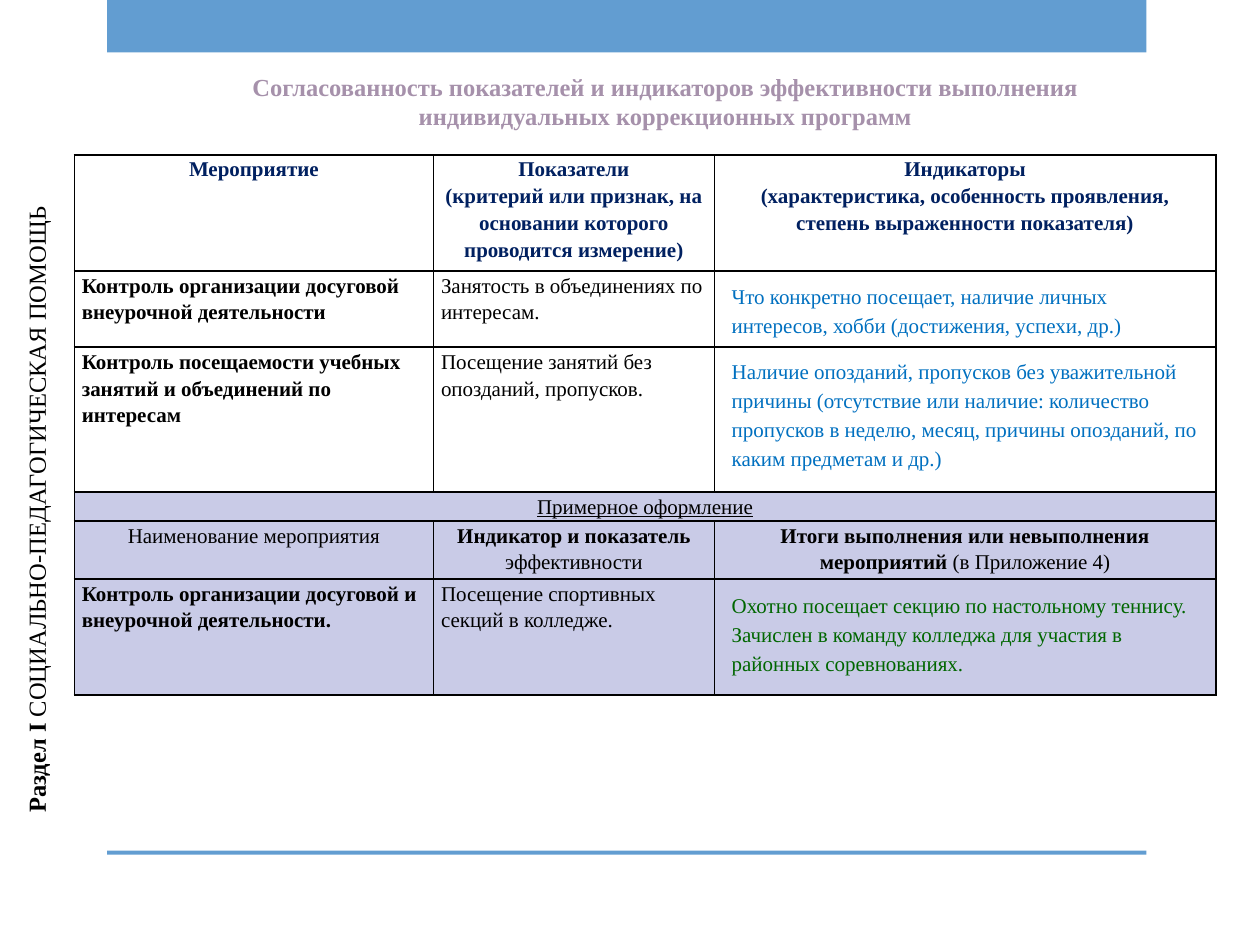
from lxml.etree import SubElement
from pptx import Presentation
from pptx.dml.color import RGBColor
from pptx.enum.shapes import MSO_SHAPE
from pptx.enum.text import MSO_AUTO_SIZE, PP_ALIGN
from pptx.oxml.ns import qn
from pptx.util import Cm, Pt

LILAC = "C9CBE7"
NAVY, BLUE, GREEN, BLACK = "002060", "0070C0", "006600", "000000"
COLUMNS = [7.24, 5.66, 10.11]
ROWS = [2.34, 1.54, 2.92, 0.58, 1.17, 2.34]

HEADER = {"align": PP_ALIGN.CENTER, "color": NAVY, "bold": True}
CENTERED = {"align": PP_ALIGN.CENTER}
CELLS = [
    (0, 0, ["Мероприятие"], HEADER),
    (0, 1, ["Показатели", "(критерий или признак, на основании которого проводится измерение)"], HEADER),
    (0, 2, ["Индикаторы", "(характеристика, особенность проявления, степень выраженности показателя)"], HEADER),
    (1, 0, ["Контроль организации досуговой внеурочной деятельности"], {"bold": True}),
    (1, 1, ["Занятость в объединениях по интересам."], {}),
    (2, 0, ["Контроль посещаемости учебных занятий и объединений по интересам"], {"bold": True}),
    (2, 1, ["Посещение занятий без опозданий, пропусков."], {}),
    (3, 0, ["Примерное оформление"], {"align": PP_ALIGN.CENTER, "underline": True}),
    (4, 0, ["Наименование мероприятия"], CENTERED),
    (4, 1, [[("Индикатор и показатель ", True), ("эффективности", False)]], CENTERED),
    (4, 2, [[("Итоги выполнения или невыполнения мероприятий ", True), ("(в Приложение 4)", False)]], CENTERED),
    (5, 0, ["Контроль организации досуговой и внеурочной деятельности."], {"bold": True}),
    (5, 1, ["Посещение спортивных секций в колледже."], {}),
]
NOTES = [
    (1, 0, 9.6, 1.44, BLUE,
     "Что конкретно посещает, наличие личных интересов, хобби (достижения, успехи, др.)"),
    (2, -0.03, 10.01, 2.62, BLUE,
     "Наличие опозданий, пропусков без уважительной причины (отсутствие или наличие: количество "
     "пропусков в неделю, месяц, причины опозданий, по каким предметам и др.)"),
    (5, 0.02, 10.01, 2.03, GREEN,
     "Охотно посещает секцию по настольному теннису. Зачислен в команду колледжа для участия "
     "в районных соревнованиях."),
]


def rgb(value):
    return RGBColor.from_string(value)


def apply(target, values):
    for name, value in values.items():
        setattr(target, name, value)


def write(frame, lines, size=12, color=BLACK, bold=False, underline=False,
          align=PP_ALIGN.LEFT, spacing=1.15):
    for index, line in enumerate(lines):
        para = frame.add_paragraph() if index else frame.paragraphs[0]
        apply(para, {"alignment": align, "line_spacing": spacing})
        pieces = [(line, bold)] if isinstance(line, str) else line
        for text, weight in pieces:
            span = para.add_run()
            span.text = text
            apply(span.font, {"name": "Times New Roman", "size": Pt(size),
                              "bold": weight, "underline": underline})
            span.font.color.rgb = rgb(color)


def add_bar(page, box):
    bar = page.shapes.add_shape(MSO_SHAPE.RECTANGLE, *map(Cm, box))
    bar.shadow.inherit = False
    bar.fill.solid()
    bar.fill.fore_color.rgb = rgb("629DD1")
    bar.line.fill.background()


def add_text(page, box, lines, rotation=0, **style):
    holder = page.shapes.add_textbox(*map(Cm, box))
    holder.rotation = rotation
    apply(holder.text_frame, {"word_wrap": True, "auto_size": MSO_AUTO_SIZE.SHAPE_TO_FIT_TEXT})
    write(holder.text_frame, lines, **style)


def add_borders(cell):
    properties = cell._tc.get_or_add_tcPr()
    for position, side in enumerate(("lnL", "lnR", "lnT", "lnB")):
        line = SubElement(properties, qn(f"a:{side}"), w=str(Pt(1)))
        fill = SubElement(line, qn("a:solidFill"))
        SubElement(fill, qn("a:srgbClr"), val=BLACK)
        properties.remove(line)
        properties.insert(position, line)


def add_programme_table(page, box):
    table = page.shapes.add_table(len(ROWS), len(COLUMNS), *map(Cm, box)).table
    apply(table, {"first_row": False, "horz_banding": False})
    for column, width in zip(table.columns, COLUMNS):
        column.width = Cm(width)
    for row, height in zip(table.rows, ROWS):
        row.height = Cm(height)
    for index, row in enumerate(table.rows):
        for cell in row.cells:
            apply(cell, {"margin_left": Cm(0.15), "margin_right": Cm(0.15),
                         "margin_top": 0, "margin_bottom": 0})
            if index < 3:
                cell.fill.background()
            else:
                cell.fill.solid()
                cell.fill.fore_color.rgb = rgb(LILAC)
            add_borders(cell)
    table.cell(3, 0).merge(table.cell(3, 2))
    for row, column, lines, style in CELLS:
        write(table.cell(row, column).text_frame, lines, **style)


def add_notes(page, box):
    left, top = box[0] + sum(COLUMNS[:2]) + 0.1, box[1]
    for row, shift, width, height, color, text in NOTES:
        note_top = top + sum(ROWS[:row]) + 0.05 + shift
        add_text(page, (left, note_top, width, height), [text], color=color)


def build_slide(page, box):
    left, top, width, height = box
    table_box = (left + 1.5, top + 3.12, sum(COLUMNS), sum(ROWS))
    add_bar(page, (left + 2.16, top, width - 4.45, 1.06))
    add_bar(page, (left + 2.16, top + height - 1.9, width - 4.45, 0.08))
    add_programme_table(page, table_box)
    add_notes(page, table_box)
    add_text(page, (left - 5.97, top + 9.5, 13.41, 0.86),
             [[("Раздел I", True), (" СОЦИАЛЬНО-ПЕДАГОГИЧЕСКАЯ ПОМОЩЬ", False)]],
             rotation=270, size=14, spacing=1.0)
    add_text(page, (left + 2.11, top + 1.32, 22.61, 1.45),
             ["Согласованность показателей и индикаторов эффективности выполнения",
              "индивидуальных коррекционных программ"],
             size=14, color="A691AB", bold=True, align=PP_ALIGN.CENTER, spacing=1.0)


def main():
    deck = Presentation()
    apply(deck, {"slide_width": Cm(25.4), "slide_height": Cm(19.05)})
    page = deck.slides.add_slide(deck.slide_layouts[6])
    build_slide(page, (0, 0, 25.4, 19.05))
    deck.save("out.pptx")


if __name__ == "__main__":
    main()
